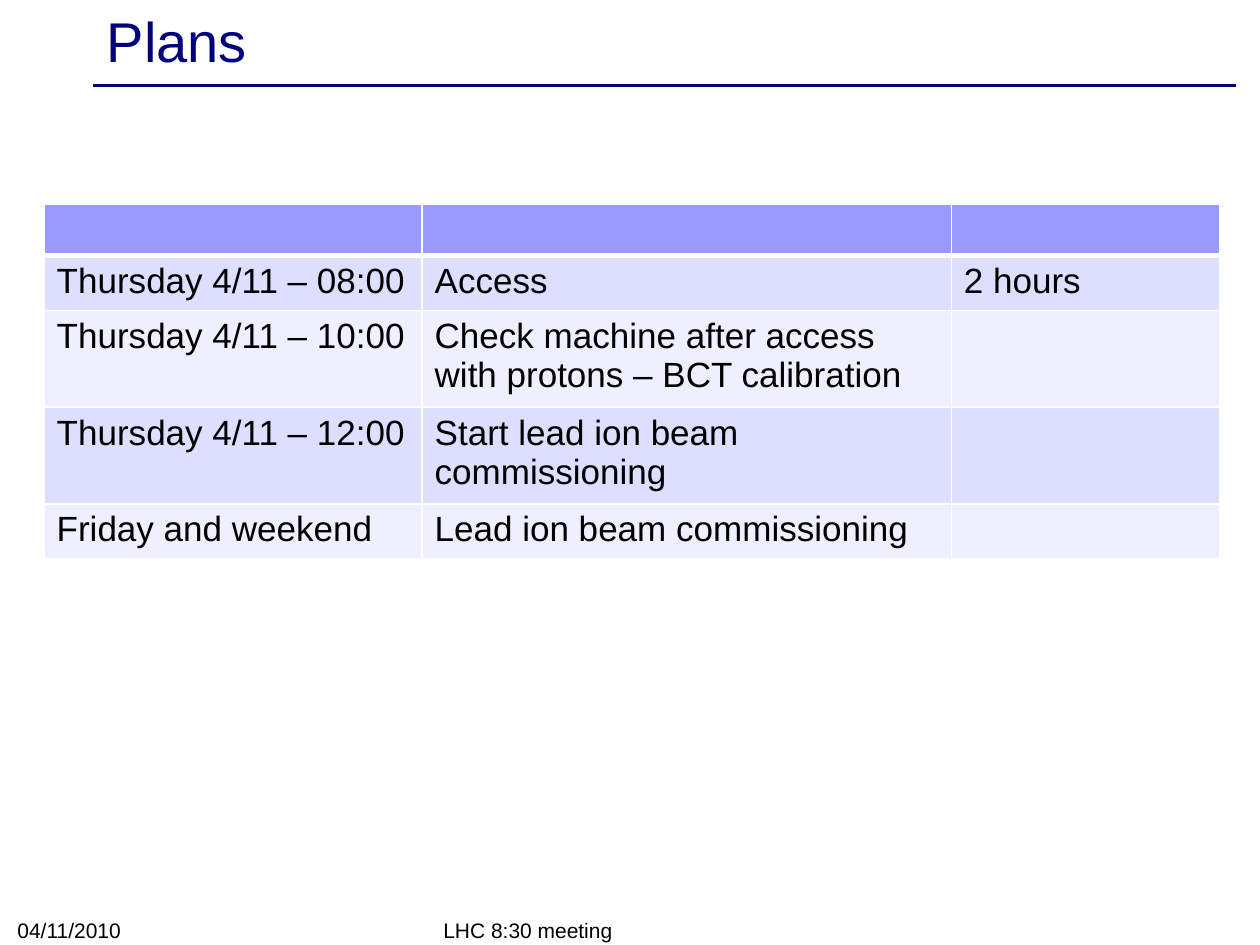
import pptx
import pptx.util
import pptx.dml.color
import pptx.enum.shapes
import pptx.enum.text
import pptx.oxml
import pptx.oxml.ns
from lxml import etree

Inches, Pt = pptx.util.Inches, pptx.util.Pt
RGB = pptx.dml.color.RGBColor.from_string
ANCHOR = pptx.enum.text.MSO_ANCHOR
COLORS = {"navy": "00007D", "black": "000000", "white": "FFFFFF",
          "header": "9999FF", "band": "DEDEFF", "light": "EFEFFF"}


def add_run(tf, text, size, color):
    r = tf.paragraphs[0].add_run()
    r.text = text
    r.font.name, r.font.size = "Arial", Pt(size)
    r.font.color.rgb = RGB(COLORS[color])


def add_border(cell, side, width):
    ln = etree.SubElement(cell._tc.get_or_add_tcPr(), pptx.oxml.ns.qn("a:ln" + side),
                          w=str(Pt(width)))
    fill = etree.SubElement(ln, pptx.oxml.ns.qn("a:solidFill"))
    etree.SubElement(fill, pptx.oxml.ns.qn("a:srgbClr"), val=COLORS["white"])


prs = pptx.Presentation()
prs.slide_width, prs.slide_height = Inches(10), Inches(7.5)
s = prs.slides.add_slide(prs.slide_layouts[6])

# Rule under the title
rule = s.shapes.add_connector(pptx.enum.shapes.MSO_CONNECTOR.STRAIGHT,
                              Inches(0.74), Inches(0.68), Inches(9.81), Inches(0.68))
rule.line.color.rgb = RGB(COLORS["navy"])
rule.line.width = Pt(2)
etree.SubElement(rule._element.spPr, pptx.oxml.ns.qn("a:effectLst"))

# Title and footers
for text, box, size, color, anchor in [
    ("Plans", (0.75, 0.03, 9, 0.57), 32, "navy", ANCHOR.MIDDLE),
    ("LHC 8:30 meeting", (3.42, 7.25, 3.17, 0.28), 12, "black", ANCHOR.BOTTOM),
    ("04/11/2010", (0.04, 7.24, 2.33, 0.29), 12, "black", ANCHOR.BOTTOM),
]:
    tf = s.shapes.add_textbox(*map(Inches, box)).text_frame
    tf.word_wrap = True
    tf.vertical_anchor = anchor
    add_run(tf, text, size, color)

# Schedule table
rows = [
    ("", "", ""),
    ("Thursday 4/11 – 08:00", "Access", "2 hours"),
    ("Thursday 4/11 – 10:00", "Check machine after access with protons – BCT calibration", ""),
    ("Thursday 4/11 – 12:00", "Start lead ion beam commissioning", ""),
    ("Friday and weekend", "Lead ion beam commissioning", ""),
]
widths = [3, 4.2, 2.13]
heights = [0.41, 0.41, 0.72, 0.72, 0.41]
table = s.shapes.add_table(len(rows), len(widths), Inches(0.35), Inches(1.62),
                           Inches(sum(widths)), Inches(sum(heights))).table
for column, width in zip(table.columns, widths):
    column.width = Inches(width)
for i, texts in enumerate(rows):
    table.rows[i].height = Inches(heights[i])
    shade = "header" if i == 0 else "band" if i % 2 else "light"
    for j, text in enumerate(texts):
        cell = table.cell(i, j)
        for side in "LRTB":
            thick = (i == 0 and side == "B") or (i == 1 and side == "T")
            add_border(cell, side, 3 if thick else 1)
        cell.fill.solid()
        cell.fill.fore_color.rgb = RGB(COLORS[shade])
        if text:
            add_run(cell.text_frame, text, 20, "black")

prs.save("out.pptx")
